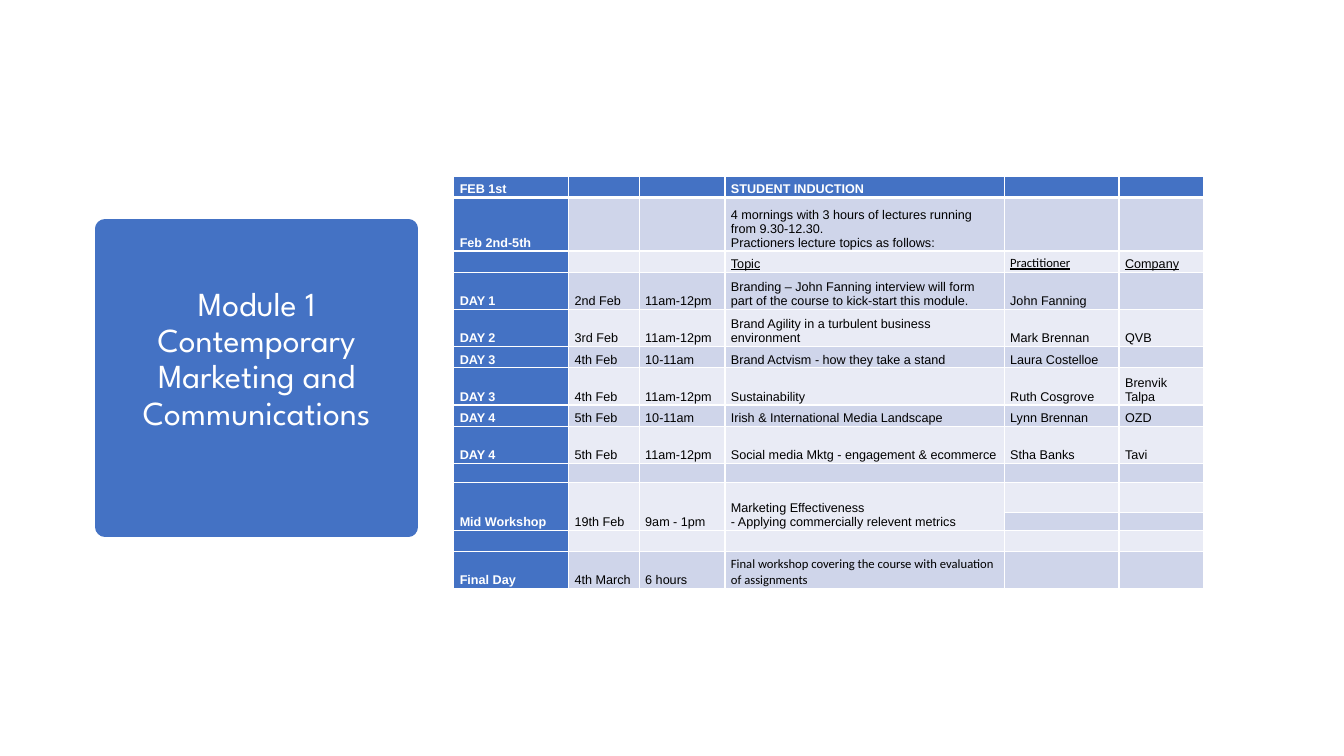
"""Build the Module 1 timetable slide."""
from lxml import etree
from pptx import Presentation
from pptx.dml.color import RGBColor
from pptx.enum.shapes import MSO_SHAPE
from pptx.enum.text import MSO_ANCHOR, PP_ALIGN
from pptx.oxml.ns import qn
from pptx.util import Inches, Pt

RECTANGLE = MSO_SHAPE.RECTANGLE
MIDDLE, BOTTOM = MSO_ANCHOR.MIDDLE, MSO_ANCHOR.BOTTOM
LEFT, CENTER = PP_ALIGN.LEFT, PP_ALIGN.CENTER

COLUMN_WIDTHS = [1.14, 0.7, 0.85, 2.77, 1.14, 0.84]
ROW_HEIGHTS = [0.21, 0.53, 0.21, 0.37, 0.37, 0.21, 0.37,
               0.21, 0.37, 0.19, 0.3, 0.17, 0.21, 0.37]
HEADING_ROW, WORKSHOP_ROW = 2, 10
CALIBRI_CELLS = {(2, 4), (13, 3)}
TIMETABLE = [
    ["FEB 1st", "", "", "STUDENT INDUCTION", "", ""],
    ["Feb 2nd-5th", "", "",
     "4 mornings with 3 hours of lectures running from 9.30-12.30.\n"
     "Practioners lecture topics as follows:", "", ""],
    ["", "", "", "Topic", "Practitioner", "Company"],
    ["DAY 1", "2nd Feb", "11am-12pm",
     "Branding – John Fanning interview will form part of the course to "
     "kick-start this module.", "John Fanning", ""],
    ["DAY 2", "3rd Feb", "11am-12pm",
     "Brand Agility in a turbulent business environment", "Mark Brennan", "QVB"],
    ["DAY 3", "4th Feb", "10-11am",
     "Brand Actvism - how they take a stand", "Laura Costelloe", ""],
    ["DAY 3", "4th Feb", "11am-12pm", "Sustainability", "Ruth Cosgrove", "Brenvik Talpa"],
    ["DAY 4", "5th Feb", "10-11am",
     "Irish & International Media Landscape", "Lynn Brennan", "OZD"],
    ["DAY 4", "5th Feb", "11am-12pm",
     "Social media Mktg - engagement & ecommerce", "Stha Banks", "Tavi"],
    [""] * 6,
    ["Mid Workshop", "19th Feb", "9am - 1pm",
     "Marketing Effectiveness\n- Applying commercially relevent metrics", "", ""],
    [""] * 6,
    [""] * 6,
    ["Final Day", "4th March", "6 hours",
     "Final workshop covering the course with evaluation of assignments", "", ""],
]


def color(value):
    return RGBColor.from_string(value)


def write_text(frame, text, *, size, font, fill, bold=False, underline=False,
               align=LEFT, spacing=1.0):
    for index, line in enumerate(text.split("\n")):
        paragraph = frame.paragraphs[0] if index == 0 else frame.add_paragraph()
        paragraph.alignment = align
        paragraph.line_spacing = spacing
        if not line:
            etree.SubElement(paragraph._p, qn("a:endParaRPr"), sz=str(size * 100))
            continue
        run = paragraph.add_run()
        run.text = line
        run.font.size = Pt(size)
        run.font.name = font
        run.font.bold = bold
        run.font.underline = underline
        run.font.color.rgb = color(fill)


class SlideBuilder:
    """Hold the slide and its style, and draw each kind of element."""

    blue, white, black = "4472C4", "FFFFFF", "000000"
    bands = ["E9EBF5", "CFD5EA"]
    title_font, body_font, note_font = "League Spartan", "Arial", "Calibri"

    def __init__(self, slide):
        self.slide = slide

    def title_panel(self, text, left, top, width, height):
        shape = self.slide.shapes.add_shape(
            RECTANGLE, Inches(left), Inches(top), Inches(width), Inches(height))
        shape.shadow.inherit = False
        shape.fill.solid()
        shape.fill.fore_color.rgb = color(self.blue)
        shape.line.color.rgb = color(self.blue)
        shape.line.width = Pt(13.75)
        etree.SubElement(shape.line._get_or_add_ln(), qn("a:round"))
        frame = shape.text_frame
        frame.word_wrap = True
        frame.vertical_anchor = MIDDLE
        frame.margin_bottom = Inches(0.41)
        write_text(frame, text, size=24, font=self.title_font, fill=self.white,
                   align=CENTER, spacing=0.9)

    def borders(self, cell, row):
        properties = cell._tc.get_or_add_tcPr()
        widths = {"L": 1, "R": 1, "T": 3 if row == 1 else 1, "B": 3 if row == 0 else 1}
        for side, width in widths.items():
            line = etree.SubElement(properties, qn(f"a:ln{side}"), w=str(Pt(width)))
            fill = etree.SubElement(line, qn("a:solidFill"))
            etree.SubElement(fill, qn("a:srgbClr"), val=self.white)

    def cell(self, cell, text, row, column):
        header = row == 0 or column == 0
        self.borders(cell, row)
        cell.fill.solid()
        cell.fill.fore_color.rgb = color(self.blue if header else self.bands[row % 2])
        cell.vertical_anchor = BOTTOM
        cell.margin_left = cell.margin_right = Inches(0.06)
        cell.margin_top = cell.margin_bottom = Inches(0.01)
        write_text(cell.text_frame, text, size=9, bold=header,
                   font=self.note_font if (row, column) in CALIBRI_CELLS else self.body_font,
                   fill=self.white if header else self.black,
                   underline=row == HEADING_ROW)

    def timetable(self, rows, left, top):
        table = self.slide.shapes.add_table(
            len(rows), len(COLUMN_WIDTHS), Inches(left), Inches(top),
            Inches(sum(COLUMN_WIDTHS)), Inches(sum(ROW_HEIGHTS))).table
        table.first_col = True
        for column, width in zip(table.columns, COLUMN_WIDTHS):
            column.width = Inches(width)
        for row, height in zip(table.rows, ROW_HEIGHTS):
            row.height = Inches(height)
        for row, texts in enumerate(rows):
            for column, text in enumerate(texts):
                self.cell(table.cell(row, column), text, row, column)
        for column in range(4):
            table.cell(WORKSHOP_ROW, column).merge(table.cell(WORKSHOP_ROW + 1, column))


def main():
    presentation = Presentation()
    presentation.slide_width = Inches(13.33)
    presentation.slide_height = Inches(7.5)
    builder = SlideBuilder(presentation.slides.add_slide(presentation.slide_layouts[6]))
    builder.title_panel("Module 1\nContemporary Marketing and Communications",
                        1.04, 2.27, 3.01, 2.96)
    builder.timetable(TIMETABLE, 4.5, 1.75)
    presentation.save("out.pptx")


if __name__ == "__main__":
    main()
